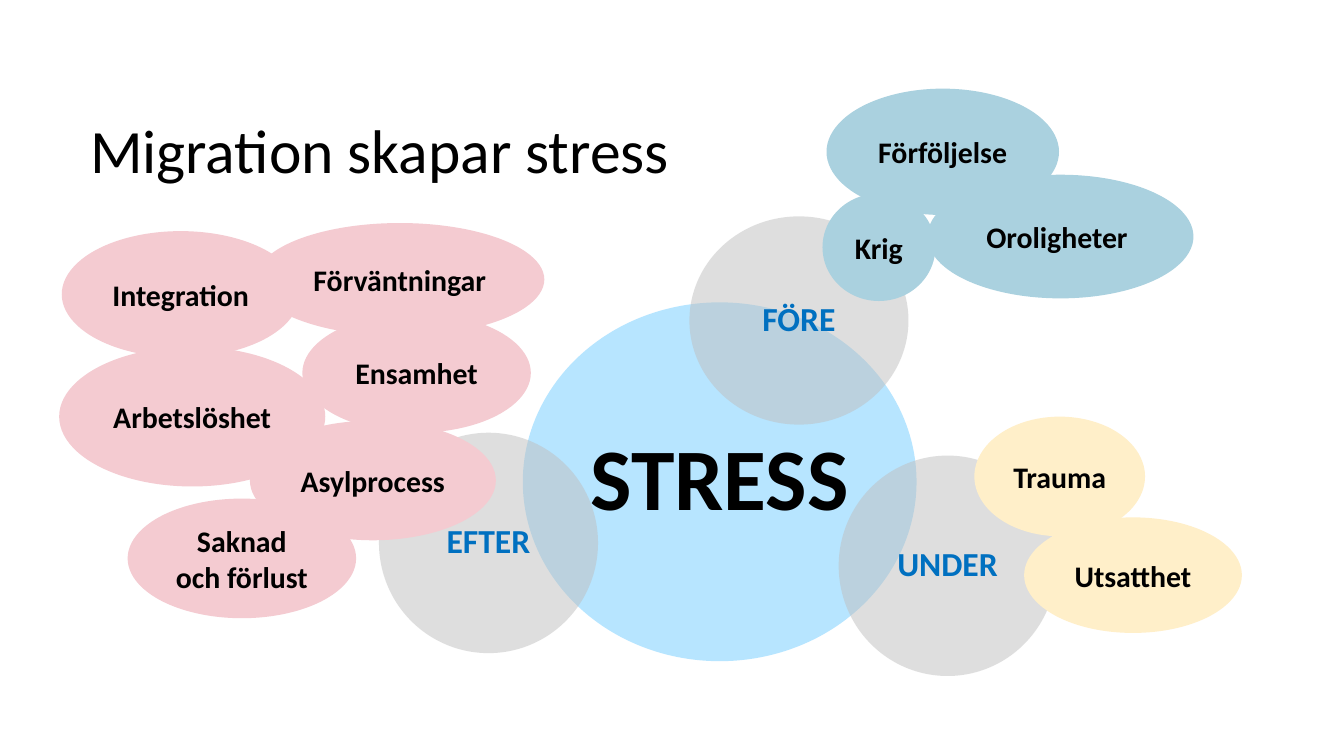
from lxml import etree
from pptx import Presentation
from pptx.dml.color import RGBColor
from pptx.enum.shapes import MSO_SHAPE
from pptx.enum.text import MSO_ANCHOR, PP_ALIGN
from pptx.oxml.ns import qn
from pptx.util import Inches, Pt

CIRCLE, BUBBLE = MSO_SHAPE.OVAL, MSO_SHAPE.FLOWCHART_CONNECTOR
MIDDLE, LEFT, CENTER = MSO_ANCHOR.MIDDLE, PP_ALIGN.LEFT, PP_ALIGN.CENTER
COLUMNS = 1000
BLACK, BLUE, GREY, SKY = "000000", "0070C0", "BFBFBF", "70CCFF"
TEAL, PINK, YELLOW = "AAD1DF", "F4CBD1", "FFEFC9"

deck = Presentation()
deck.slide_width = Inches(10)
deck.slide_height = deck.slide_width * 9 // 16
unit = deck.slide_width // COLUMNS
page = deck.slides.add_slide(deck.slide_layouts[5])


def write(box, text, size, color, bold, align, spacing, inset):
    frame = box.text_frame
    frame.word_wrap = True
    frame.vertical_anchor = MIDDLE
    frame.margin_left = frame.margin_right = Inches(inset)
    frame.margin_top = frame.margin_bottom = Inches(inset / 2)
    para = frame.paragraphs[0]
    para.alignment, para.line_spacing = align, spacing
    span = para.add_run()
    span.text = text
    font = span.font
    font.name, font.size, font.bold = "Calibri", Pt(size), bold
    font.color.rgb = RGBColor.from_string(color)


def add_oval(kind, left, top, width, height, fill):
    oval = page.shapes.add_shape(kind, left * unit, top * unit, width * unit, height * unit)
    oval.shadow.inherit = False
    oval.fill.solid()
    oval.fill.fore_color.rgb = RGBColor.from_string(fill)
    oval.line.fill.background()
    return oval


title = page.shapes.title
title.left, title.top, title.width, title.height = 67 * unit, 58 * unit, 883 * unit, 113 * unit
write(title, "Migration skapar stress", 33, BLACK, False, LEFT, 0.9, 0)

circles = [
    ("STRESS", 389, 225, 293, 267, SKY, 47, BLACK),
    ("FÖRE", 513, 161, 163, 155, GREY, 18, BLUE),
    ("UNDER", 624, 339, 162, 164, GREY, 18, BLUE),
    ("EFTER", 282, 322, 163, 164, GREY, 18, BLUE),
]
for text, left, top, width, height, fill, size, color in circles:
    circle = add_oval(CIRCLE, left, top, width, height, fill)
    tint = circle.fill._xPr.find(qn("a:solidFill"))[0]
    etree.SubElement(tint, qn("a:alpha")).set("val", "50000")
    write(circle, text, size, color, True, CENTER, 0.9, 0)

bubbles = [
    ("Krig", 612, 144, 84, 80, TEAL),
    ("Förföljelse", 615, 66, 173, 94, TEAL),
    ("Trauma", 725, 310, 127, 89, YELLOW),
    ("Oroligheter ", 690, 130, 198, 92, TEAL),
    ("Asylprocess", 186, 313, 183, 89, PINK),
    ("Saknad och förlust", 95, 371, 170, 89, PINK),
    ("Ensamhet", 225, 233, 170, 89, PINK),
    ("Arbetslöshet", 44, 258, 198, 104, PINK),
    ("Integration", 46, 172, 177, 94, PINK),
    ("Förväntningar", 190, 166, 215, 84, PINK),
    ("Utsatthet", 762, 385, 162, 86, YELLOW),
]
for text, left, top, width, height, fill in bubbles:
    bubble = add_oval(BUBBLE, left, top, width, height, fill)
    write(bubble, text, 16, BLACK, True, CENTER, 1.0, 0.1)

deck.save("out.pptx")
